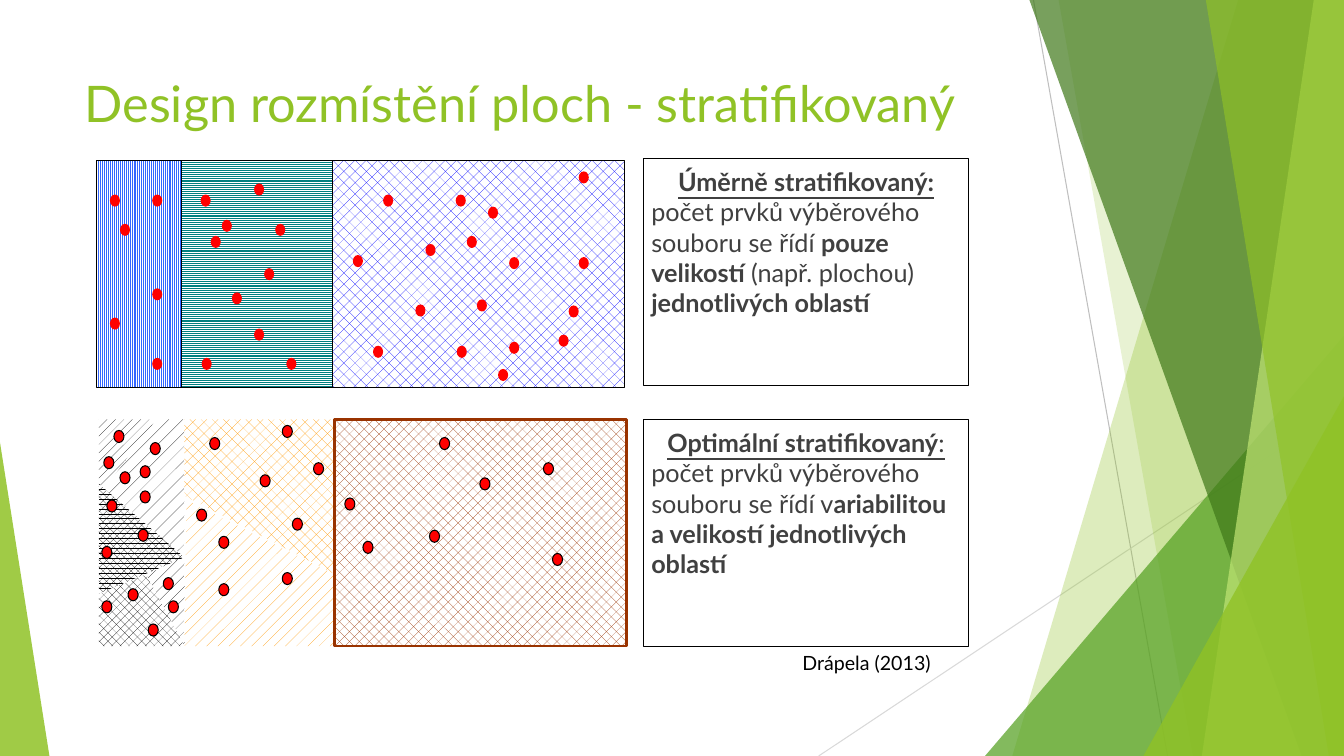
from lxml import etree
from pptx import Presentation
from pptx.dml.color import RGBColor
from pptx.enum.dml import MSO_PATTERN as PAT
from pptx.enum.shapes import MSO_CONNECTOR, MSO_SHAPE as SHAPE
from pptx.enum.text import MSO_ANCHOR, PP_ALIGN
from pptx.oxml.ns import qn
from pptx.util import Inches, Pt

LIME = RGBColor(0x90, 0xC2, 0x26)
PALE_LIME = RGBColor(0xC0, 0xE4, 0x74)
GREEN = RGBColor(0x54, 0xA0, 0x21)
DARK_GREEN = RGBColor(0x3F, 0x78, 0x19)
GREY = RGBColor(0xBF, 0xBF, 0xBF)
LIGHT_GREY = RGBColor(0xD9, 0xD9, 0xD9)
TEXT_GREY = RGBColor(0x40, 0x40, 0x40)
BLACK = RGBColor(0, 0, 0)
WHITE = RGBColor(0xFF, 0xFF, 0xFF)
RED = RGBColor(0xFF, 0, 0)
SKY = RGBColor(0x33, 0x66, 0xFF)
TEAL = RGBColor(0, 0x80, 0x80)
BLUE = RGBColor(0, 0, 0xFF)
ORANGE = RGBColor(0xFF, 0x99, 0)
BROWN = RGBColor(0x99, 0x33, 0)

FONT = "Lato"
WIDTH, HEIGHT = 13.33, 7.5
PANEL_H = 2.25
DOT_W, DOT_H = 0.1, 0.12

PROPORTIONAL_DOTS = [
    (0.13, 0.34), (0.55, 0.34), (0.55, 1.96), (0.23, 0.63), (0.13, 1.56), (0.55, 1.27),
    (1.77, 0.63), (1.03, 0.34), (1.56, 0.23), (1.13, 0.75), (1.66, 1.07), (1.56, 1.67),
    (2.84, 0.34), (1.24, 0.59), (1.34, 1.31), (4.78, 0.11), (1.04, 1.96), (1.88, 1.96),
    (2.54, 0.94), (3.16, 1.43), (3.88, 0.46), (3.77, 1.38), (4.68, 1.44), (4.09, 0.96),
    (4.58, 1.73), (3.26, 0.83), (3.56, 0.34), (3.67, 0.75), (3.57, 1.84), (4.09, 1.8),
    (2.74, 1.84), (4.78, 0.96), (3.98, 2.07)]
OPTIMAL_DOTS = [
    (0.15, 0.11), (0.41, 0.71), (0.08, 0.8), (0.51, 0.23), (0.69, 1.8), (0.39, 1.09),
    (0.03, 1.26), (0.64, 1.57), (0.05, 0.37), (0.29, 1.68), (0.21, 0.52), (0.49, 2.03),
    (0.41, 0.46), (0.03, 1.8), (0.97, 0.89), (1.82, 0.06), (2.13, 0.43), (1.6, 0.55),
    (2.44, 0.78), (1.92, 0.98), (1.82, 1.52), (2.62, 1.21), (1.19, 1.16), (1.19, 1.63),
    (3.38, 0.18), (4.41, 0.43), (3.78, 0.58), (1.1, 0.18), (3.28, 1.1), (4.5, 1.33)]


def paint(sp, color, pattern=None, line=None, width=0.75, opacity=100):
    sp.shadow.inherit = False
    if pattern is None:
        sp.fill.solid()
        sp.fill.fore_color.rgb = color
    else:
        sp.fill.patterned()
        sp.fill.pattern = pattern
        sp.fill.fore_color.rgb = color
        sp.fill.back_color.rgb = WHITE
    if opacity < 100:
        clr = sp._element.spPr.find(qn("a:solidFill")).find(qn("a:srgbClr"))
        etree.SubElement(clr, qn("a:alpha"), val=str(opacity * 1000))
    if line is None:
        sp.line.fill.background()
    else:
        sp.line.color.rgb = line
        sp.line.width = Pt(width)


def add_preset(s, kind, left, top, width, height):
    return s.shapes.add_shape(kind, Inches(left), Inches(top), Inches(width), Inches(height))


def add_polygon(s, left, top, points):
    pts = [(Inches(left + x), Inches(top + y)) for x, y in points]
    builder = s.shapes.build_freeform(*pts[0], scale=1.0)
    builder.add_line_segments(pts[1:], close=True)
    return builder.convert_to_shape()


def write_runs(p, runs, **base):
    for text, extra in runs:
        r = p.add_run()
        r.text = text
        formats = {"name": FONT, **base, **extra}
        color = formats.pop("color")
        for name, value in formats.items():
            setattr(r.font, name, value)
        r.font.color.rgb = color


# Green facets along the slide edges
def add_decoration(s, left, top, width, height):
    right, bottom = left + width, top + height
    for x1, y1, x2, y2, color in [(10.25, 0, 11.58, height, GREY),
                                  (width, 4.03, 8.12, height, LIGHT_GREY)]:
        line = s.shapes.add_connector(MSO_CONNECTOR.STRAIGHT, Inches(left + x1), Inches(top + y1),
                                      Inches(left + x2), Inches(top + y2))
        line.line.color.rgb = color
        line.line.width = Pt(0.75)
        etree.SubElement(line._element.spPr, qn("a:effectLst"))

    def facet(x_top, x_bottom, color, opacity):
        sp = add_polygon(s, left, top, [(x_top, 0), (width, 0), (width, height), (x_bottom, height)])
        paint(sp, color, opacity=opacity)

    def corner(x, w, h, apex, color, opacity):
        sp = add_preset(s, SHAPE.ISOSCELES_TRIANGLE, x, bottom - h, w, h)
        sp.adjustments[0] = apex
        paint(sp, color, opacity=opacity)

    facet(12.28, 10.04, LIME, 30)
    facet(10.5, 11.83, LIME, 20)
    corner(right - 3.56, 3.56, 4.17, 1, GREEN, 72)
    facet(10.21, 12.91, DARK_GREEN, 70)
    facet(13.03, 11.92, PALE_LIME, 70)
    facet(11.96, 13.18, LIME, 65)
    corner(right - 1.99, 1.99, 3.57, 1, LIME, 80)
    corner(left, 0.49, 3.11, 0, LIME, 85)


def add_dots(s, left, top, dots, line=None):
    for x, y in dots:
        paint(add_preset(s, SHAPE.OVAL, left + x, top + y, DOT_W, DOT_H), RED, line=line)


# Upper map: sample size follows the stratum area
def add_proportional_map(s, left, top, height):
    for x, w, color, pattern in [(0, 0.85, SKY, PAT.LIGHT_VERTICAL),
                                 (0.84, 1.5, TEAL, PAT.LIGHT_HORIZONTAL),
                                 (2.34, 2.89, BLUE, PAT.PERCENT_25)]:
        paint(add_preset(s, SHAPE.RECTANGLE, left + x, top, w, height), color, pattern, BLACK)
    add_dots(s, left, top, PROPORTIONAL_DOTS)


# Lower map: sample size follows variability and area
def add_optimal_map(s, left, top, height):
    strata = [
        (BLACK, PAT.PERCENT_5, [(0, 0.67), (0.85, 1.37), (0.85, 0), (0.57, 0)]),
        (BLACK, PAT.PERCENT_20, [(0, 0.76), (0, 0), (0.57, 0)]),
        (BLACK, PAT.PERCENT_70, [(0.85, 1.37), (0, 1.73), (0, 0.64)]),
        (BLACK, PAT.PERCENT_10, [(0.85, height), (0.47, 1.54), (0.85, 1.37)]),
        # The library spells the 40 % pattern without its first letter
        (BLACK, PAT.ERCENT_40, [(0.85, height), (0.47, 1.54), (0, 1.73), (0, height)]),
        (ORANGE, PAT.PERCENT_25, [(0.85, 0.76), (2.35, 1.54), (2.34, 0), (0.85, 0)]),
        (ORANGE, PAT.PERCENT_10, [(0.85, height), (2.34, height), (2.34, 1.54), (0.87, 0.8)]),
    ]
    for color, pattern, points in strata:
        paint(add_polygon(s, left, top, points), color, pattern)
    stand = add_preset(s, SHAPE.RECTANGLE, left + 2.34, top, 2.89, height)
    paint(stand, BROWN, PAT.PERCENT_30, BROWN, 2)
    add_dots(s, left, top, OPTIMAL_DOTS, BLACK)


# Framed explanation: centred heading over a left-aligned sentence
def add_explanation(s, left, top, width, height, heading, sentence):
    sp = add_preset(s, SHAPE.RECTANGLE, left, top, width, height)
    paint(sp, WHITE, line=BLACK)
    tf = sp.text_frame
    margins = dict.fromkeys(["margin_left", "margin_top", "margin_right", "margin_bottom"], Inches(0.08))
    for name, value in {**margins, "word_wrap": True, "vertical_anchor": MSO_ANCHOR.TOP}.items():
        setattr(tf, name, value)
    rows = [(tf.paragraphs[0], PP_ALIGN.CENTER, heading),
            (tf.add_paragraph(), PP_ALIGN.LEFT, sentence)]
    for p, align, runs in rows:
        p.alignment = align
        write_runs(p, runs, size=Pt(18), color=TEXT_GREY)


# Single-line text: title and citation
def add_label(s, left, top, width, height, text, size, color, wrap):
    tf = s.shapes.add_textbox(Inches(left), Inches(top), Inches(width), Inches(height)).text_frame
    tf.word_wrap = wrap
    write_runs(tf.paragraphs[0], [(text, {})], size=Pt(size), color=color)


def main():
    prs = Presentation()
    prs.slide_width, prs.slide_height = Inches(WIDTH), Inches(HEIGHT)
    s = prs.slides.add_slide(prs.slide_layouts[6])
    bold, head = {"bold": True}, {"bold": True, "underline": True}

    add_decoration(s, 0, 0, WIDTH, HEIGHT)
    add_label(s, 0.74, 0.67, 9.4, 1.44, "Design rozmístění ploch - stratifikovaný", 36, LIME, True)
    add_proportional_map(s, 0.96, 1.59, PANEL_H)
    add_explanation(s, 6.38, 1.57, 3.23, PANEL_H, [("Úměrně stratifikovaný:", head)],
                    [("počet prvků výběrového souboru se řídí ", {}), ("pouze velikostí ", bold),
                     ("(např. plochou) ", {}), ("jednotlivých oblastí", bold)])
    add_optimal_map(s, 0.98, 4.16, PANEL_H)
    add_explanation(s, 6.38, 4.16, 3.23, PANEL_H,
                    [("Optimální stratifikovaný", head), (":", {"underline": True})],
                    [("počet prvků výběrového souboru se řídí v", {}),
                     ("ariabilitou a velikostí jednotlivých oblastí", bold)])
    add_label(s, 7.86, 6.41, 1.5, 0.34, "Drápela (2013)", 14, BLACK, False)
    prs.save("out.pptx")


if __name__ == "__main__":
    main()
